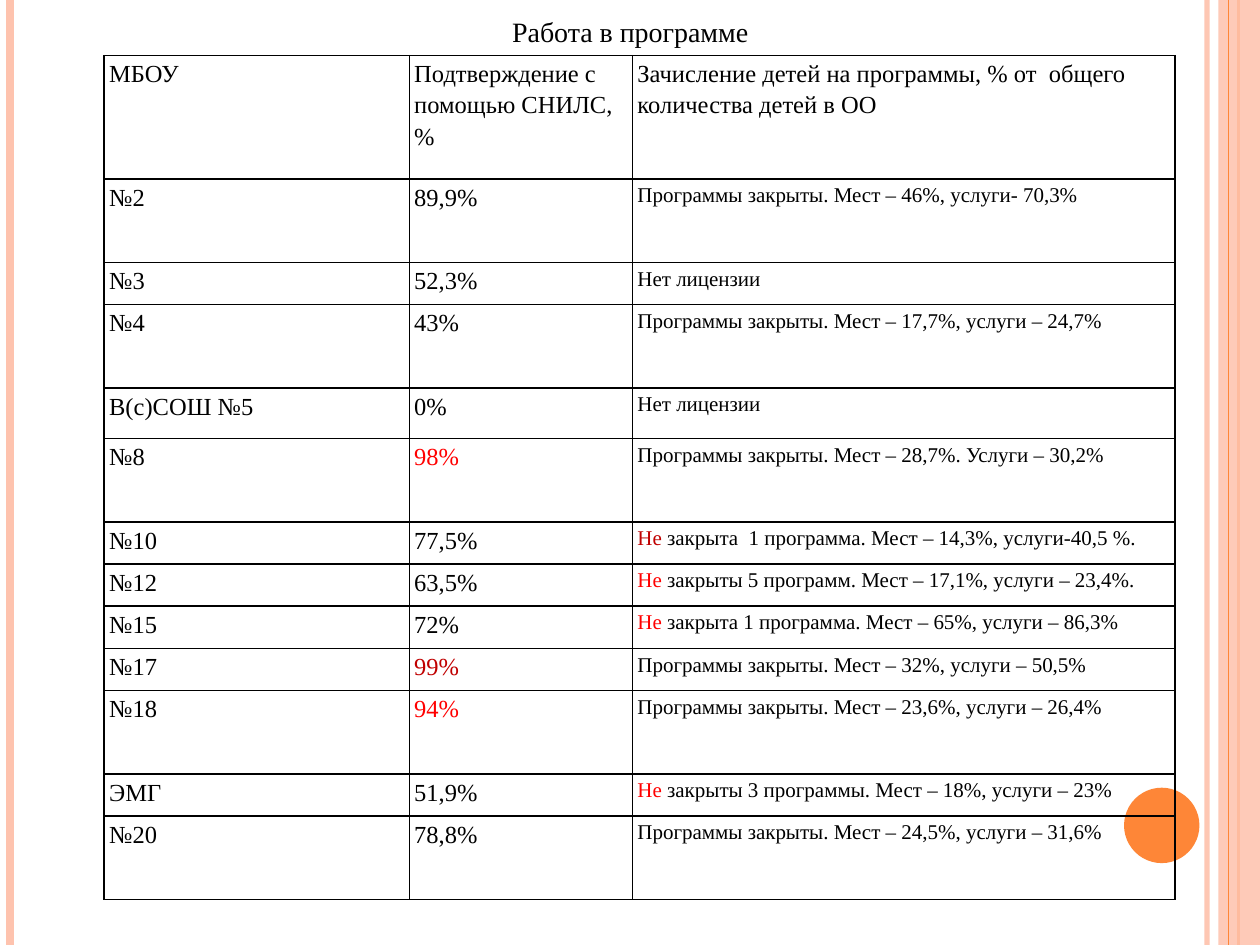
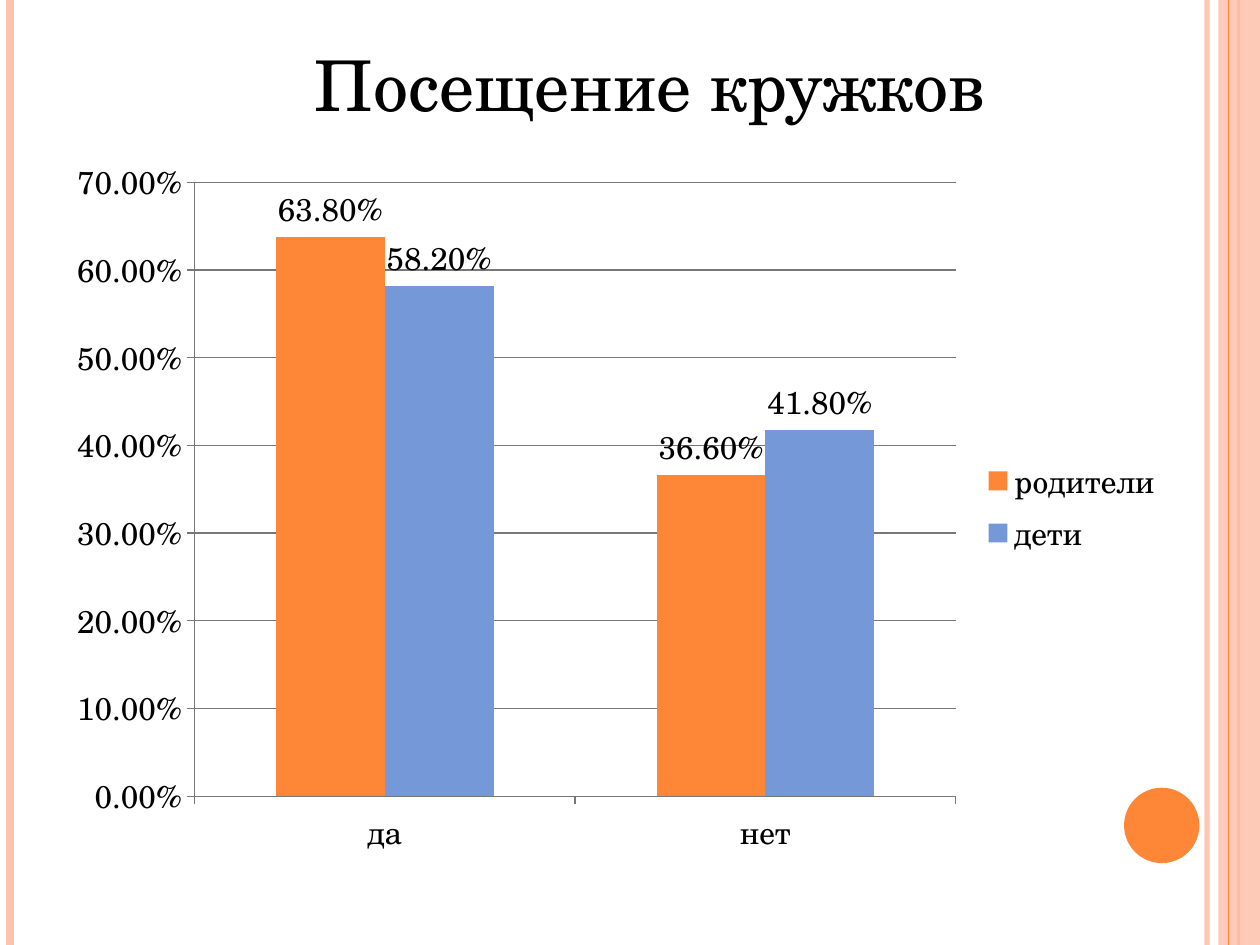
from dataclasses import dataclass

from lxml.etree import SubElement
from pptx import Presentation
from pptx.chart.data import CategoryChartData
from pptx.dml.color import RGBColor
from pptx.enum.chart import XL_CHART_TYPE, XL_LABEL_POSITION, XL_LEGEND_POSITION, XL_TICK_MARK
from pptx.enum.shapes import MSO_CONNECTOR, MSO_SHAPE
from pptx.enum.text import MSO_ANCHOR, MSO_AUTO_SIZE, PP_ALIGN
from pptx.oxml import parse_xml
from pptx.oxml.ns import nsdecls, qn
from pptx.util import Cm, Pt


@dataclass(frozen=True)
class Theme:
    """Colours, fonts and type sizes of the deck."""
    peach: str = "FEC3AE"
    orange: str = "FE8637"
    blue: str = "7598D9"
    black: str = "000000"
    red: str = "FF0000"
    dark_red: str = "C00000"
    grid: str = "777777"
    serif: str = "Times New Roman"
    display: str = "TeX Gyre Schola"
    small_title: int = 16
    large_title: int = 40
    table_text: int = 14
    table_note: int = 12
    chart_text: int = 18


@dataclass(frozen=True)
class Box:
    """A rectangle in centimetres."""
    left: float
    top: float
    width: float
    height: float

    def lengths(self):
        """Return the four sides as slide lengths."""
        return Cm(self.left), Cm(self.top), Cm(self.width), Cm(self.height)


THEME = Theme()
SLIDE = Box(0, 0, 25.4, 19.05)
HEADER, TALL, MEDIUM, SHORT = 2.49, 1.68, 1.02, 0.85
COLUMNS = (6.15, 4.5, 10.94)
NOT = ("Не", THEME.red)
SCHOOLS = (
    (HEADER, "МБОУ", "Подтверждение с помощью СНИЛС, %",
     "Зачисление детей на программы, % от  общего количества детей в ОО"),
    (TALL, "№2", "89,9%", "Программы закрыты. Мест – 46%, услуги- 70,3%"),
    (SHORT, "№3", "52,3%", "Нет лицензии"),
    (TALL, "№4", "43%", "Программы закрыты. Мест – 17,7%, услуги – 24,7%"),
    (MEDIUM, "В(с)СОШ №5", "0%", "Нет лицензии"),
    (TALL, "№8", [("98%", THEME.red)], "Программы закрыты. Мест – 28,7%. Услуги – 30,2%"),
    (SHORT, "№10", "77,5%",
     [("Не", THEME.dark_red), " закрыта  1 программа. Мест – 14,3%, услуги-40,5 %."]),
    (SHORT, "№12", "63,5%", [NOT, " закрыты 5 программ. Мест – 17,1%, услуги – 23,4%."]),
    (SHORT, "№15", "72%", [NOT, " закрыта 1 программа. Мест – 65%, услуги – 86,3%"]),
    (SHORT, "№17", [("99%", THEME.dark_red)], "Программы закрыты. Мест – 32%, услуги – 50,5%"),
    (TALL, "№18", [("94%", THEME.red)], "Программы закрыты. Мест – 23,6%, услуги – 26,4%"),
    (SHORT, "ЭМГ", "51,9%", [NOT, " закрыты 3 программы. Мест – 18%, услуги – 23%"]),
    (TALL, "№20", "78,8%", "Программы закрыты. Мест – 24,5%, услуги – 31,6%"),
)
ATTENDANCE = (
    ("родители", (0.638, 0.366), THEME.orange),
    ("дети", (0.582, 0.418), THEME.blue),
)


def style_font(font, name, size, colour=THEME.black):
    """Set the face, size and colour of a font."""
    font.name = name
    font.size = Pt(size)
    font.bold = False
    font.color.rgb = RGBColor.from_string(colour)


def set_opacity(shape, percent):
    """Make the first colour of a shape partly transparent."""
    colour = next(shape._element.spPr.iter(qn("a:srgbClr")))
    SubElement(colour, qn("a:alpha"), val=str(percent * 1000))


def add_stripe(page, box, offset, colour, weight):
    """Draw a vertical line through the whole height of the box."""
    x = Cm(box.left + offset)
    stripe = page.shapes.add_connector(
        MSO_CONNECTOR.STRAIGHT, x, Cm(box.top), x, Cm(box.top + box.height))
    stripe.line.color.rgb = RGBColor.from_string(colour)
    stripe.line.width = Pt(weight)
    SubElement(stripe._element.spPr, qn("a:effectLst"))
    return stripe


def add_filled(page, kind, box, colour):
    """Add a preset shape with a plain fill and no outline."""
    shape = page.shapes.add_shape(kind, *box.lengths())
    shape.shadow.inherit = False
    shape.fill.solid()
    shape.fill.fore_color.rgb = RGBColor.from_string(colour)
    shape.line.fill.background()
    return shape


def add_frame(page, box):
    """Draw the side stripes, the right band and the circle."""
    set_opacity(add_stripe(page, box, 24.33, THEME.peach, 3), 93)
    add_stripe(page, box, 0.2, THEME.peach, 4.5)
    add_stripe(page, box, 24.97, THEME.orange, 1.5)
    band = Box(box.left + 24.56, box.top, 0.84, box.height)
    set_opacity(add_filled(page, MSO_SHAPE.RECTANGLE, band, THEME.peach), 87)
    add_stripe(page, box, 24.77, THEME.orange, 0.75)
    circle = Box(box.left + 22.66, box.top + 15.88, 1.52, 1.52)
    add_filled(page, MSO_SHAPE.OVAL, circle, THEME.orange)


def set_title(page, box, text, face, size, anchor, wrap=True):
    """Move, fill and format the title placeholder."""
    title = page.shapes.title
    title.left, title.top, title.width, title.height = box.lengths()
    frame = title.text_frame
    frame.text = text
    frame.auto_size = MSO_AUTO_SIZE.SHAPE_TO_FIT_TEXT
    frame.word_wrap = wrap
    frame.vertical_anchor = anchor
    para = frame.paragraphs[0]
    para.alignment = PP_ALIGN.CENTER
    style_font(para.runs[0].font, face, size)


def add_borders(cell):
    """Give a cell black borders on all sides."""
    properties = cell._tc.get_or_add_tcPr()
    for index, side in enumerate(("lnL", "lnR", "lnT", "lnB")):
        properties.insert(index, parse_xml(
            f'<a:{side} {nsdecls("a")} w="12700"><a:solidFill>'
            f'<a:srgbClr val="{THEME.black}"/></a:solidFill></a:{side}>'))


def fill_cell(cell, content, size):
    """Write the spans of a cell, then set its margins and borders."""
    cell.margin_left = cell.margin_right = Cm(0.1)
    cell.margin_top, cell.margin_bottom = Cm(0.03), Cm(0)
    cell.fill.background()
    add_borders(cell)
    para = cell.text_frame.paragraphs[0]
    para.line_spacing = 1.15
    para.space_after = Pt(10)
    for part in [content] if isinstance(content, str) else content:
        text, colour = (part, THEME.black) if isinstance(part, str) else part
        span = para.add_run()
        span.text = text
        style_font(span.font, THEME.serif, size, colour)


def add_school_table(page, box):
    """Build the table of schools inside the box."""
    table = page.shapes.add_table(len(SCHOOLS), len(COLUMNS), *box.lengths()).table
    table.first_row = table.horz_banding = False
    for column, width in zip(table.columns, COLUMNS):
        column.width = Cm(width)
    for index, (height, *contents) in enumerate(SCHOOLS):
        table.rows[index].height = Cm(height)
        for position, content in enumerate(contents):
            is_note = index > 0 and position == 2
            size = THEME.table_note if is_note else THEME.table_text
            fill_cell(table.cell(index, position), content, size)


def style_axis(axis):
    """Give an axis grey lines and outward ticks."""
    axis.major_tick_mark = XL_TICK_MARK.OUTSIDE
    axis.minor_tick_mark = XL_TICK_MARK.NONE
    axis.format.line.color.rgb = RGBColor.from_string(THEME.grid)
    axis.format.line.width = Pt(0.75)


def add_attendance_chart(page, box):
    """Build the clustered column chart inside the box."""
    chart_data = CategoryChartData(number_format="0.00%")
    chart_data.categories = ("да", "нет")
    for name, values, _ in ATTENDANCE:
        chart_data.add_series(name, values)
    chart = page.shapes.add_chart(
        XL_CHART_TYPE.COLUMN_CLUSTERED, *box.lengths(), chart_data).chart
    style_font(chart.font, THEME.display, THEME.chart_text)
    chart.has_title = False
    chart.has_legend = True
    chart.legend.position = XL_LEGEND_POSITION.RIGHT
    chart.legend.include_in_layout = False
    style_axis(chart.category_axis)
    style_axis(chart.value_axis)
    chart.value_axis.tick_labels.number_format = "0.00%"
    chart.value_axis.tick_labels.number_format_is_linked = False
    grid_line = chart.value_axis.major_gridlines.format.line
    grid_line.color.rgb = RGBColor.from_string(THEME.grid)
    grid_line.width = Pt(0.75)
    plot = chart.plots[0]
    plot.vary_by_categories = False
    plot.gap_width = 150
    plot.overlap = 0
    for series, (_, _, colour) in zip(plot.series, ATTENDANCE):
        series.format.fill.solid()
        series.format.fill.fore_color.rgb = RGBColor.from_string(colour)
        labels = series.data_labels
        labels.show_value = True
        labels.number_format = "0.00%"
        labels.number_format_is_linked = False
        labels.position = XL_LABEL_POSITION.OUTSIDE_END


def add_page(deck):
    """Add a title-only page with the shared frame."""
    page = deck.slides.add_slide(deck.slide_layouts[5])
    add_frame(page, SLIDE)
    return page


def build_enrolment_page(deck):
    """Build the page with the table of schools."""
    page = add_page(deck)
    set_title(page, Box(9.96, 0.17, 5.49, 0.94), "Работа в программе",
              THEME.serif, THEME.small_title, MSO_ANCHOR.MIDDLE, wrap=False)
    add_school_table(page, Box(2.1, 1.12, 21.59, 17))


def build_attendance_page(deck):
    """Build the page with the attendance chart."""
    page = add_page(deck)
    add_attendance_chart(page, Box(1.1, 2.92, 22.6, 14.6))
    set_title(page, Box(2.7, 0.71, 20.8, 1.96), "Посещение кружков",
              THEME.display, THEME.large_title, MSO_ANCHOR.TOP)


def main():
    """Build and save the deck."""
    deck = Presentation()
    deck.slide_width, deck.slide_height = Cm(SLIDE.width), Cm(SLIDE.height)
    build_enrolment_page(deck)
    build_attendance_page(deck)
    deck.save("out.pptx")


if __name__ == "__main__":
    main()
